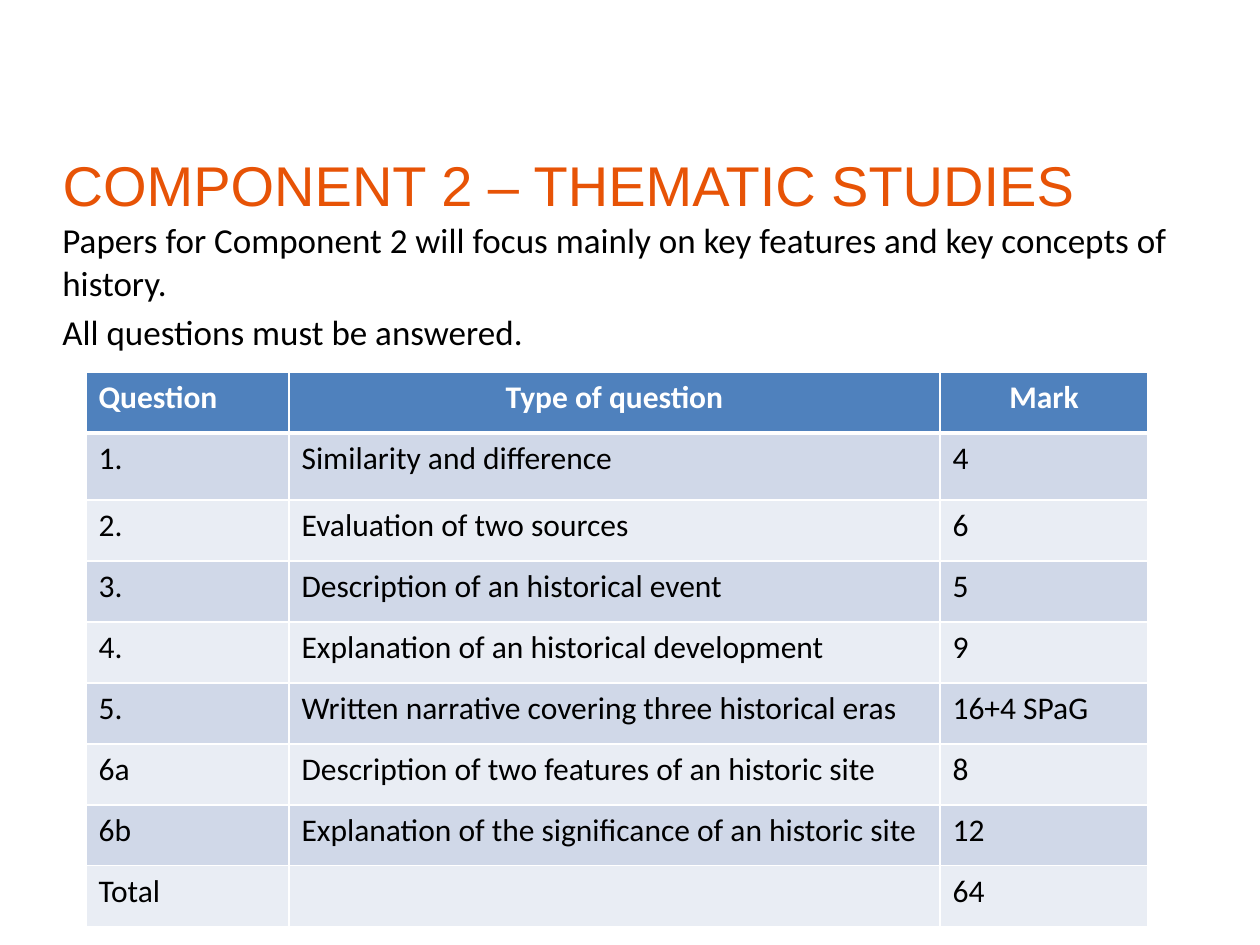
from lxml.etree import SubElement as Sub
from pptx import Presentation
from pptx.dml.color import RGBColor
from pptx.enum.text import MSO_ANCHOR as Anchor, MSO_AUTO_SIZE as Auto, PP_ALIGN as Align
from pptx.oxml.ns import qn
from pptx.util import Emu, Pt

SCALE = 914400 / 126
WHITE, BLACK, ORANGE, BLUE = "FFFFFF", "000000", "E75306", "4F81BD"
BANDS = ("D0D8E8", "E9EDF4")
COLS = (203, 651, 208)
ROWS = (61, 67) + (61,) * 7
HEADING = "COMPONENT 2 – THEMATIC STUDIES"
INTRO = (
    "Papers for Component 2 will focus mainly on key features and key concepts of history.",
    "All questions must be answered.",
)
MARKS = (
    ("Question", "Type of question", "Mark"),
    ("1.", "Similarity and difference", "4"),
    ("2.", "Evaluation of two sources", "6"),
    ("3.", "Description of an historical event", "5"),
    ("4.", "Explanation of an historical development", "9"),
    ("5.", "Written narrative covering three historical eras", "16+4 SPaG"),
    ("6a", "Description of two features of an historic site", "8"),
    ("6b", "Explanation of the significance of an historic site", "12"),
    ("Total", "", "64"),
)


def px(n):
    """Turn pixels into EMU."""
    return Emu(round(n * SCALE))


def rgb(code):
    """Turn a hex string into a colour."""
    return RGBColor.from_string(code)


def style(para, size, color, name="Calibri", bold=False, align=Align.LEFT):
    """Format a whole paragraph."""
    font = para.font
    font.size, font.name, font.bold = Pt(size), name, bold
    font.color.rgb = rgb(color)
    para.alignment = align


def place(shape, left, top, width, height):
    """Position a shape and set up its text frame."""
    shape.left, shape.top = px(left), px(top)
    shape.width, shape.height = px(width), px(height)
    frame = shape.text_frame
    frame.word_wrap, frame.auto_size = True, Auto.NONE
    frame.vertical_anchor = Anchor.TOP
    frame.margin_top = frame.margin_bottom = 0
    return frame


def add_title(slide):
    """Fill the title placeholder."""
    frame = place(slide.shapes.title, 50, 150, 1160, 64)
    frame.text = HEADING
    style(frame.paragraphs[0], 32, ORANGE, "Arial")


def add_intro(slide):
    """Add the lines between title and table."""
    frame = place(slide.shapes.add_textbox(0, 0, 0, 0), 50, 219, 1160, 140)
    frame.text = "\n".join(INTRO)
    for i, para in enumerate(frame.paragraphs):
        style(para, 20, BLACK)
        if i:
            para.space_before = Pt(4)


def edge(cell, side, width):
    """Draw one white border of a cell."""
    line = Sub(cell._tc.get_or_add_tcPr(), qn(f"a:ln{side}"), w=str(Pt(width)))
    Sub(Sub(line, qn("a:solidFill")), qn("a:srgbClr"), val=WHITE)


def fill_cell(cell, text, row, col):
    """Write and format one cell of the table."""
    head = row == 0
    widths = {"L": 1, "R": 1, "T": 3 if row == 1 else 1, "B": 3 if head else 1}
    for side, width in widths.items():
        edge(cell, side, width)
    cell.fill.solid()
    cell.fill.fore_color.rgb = rgb(BLUE if head else BANDS[(row - 1) % 2])
    cell.text = text
    align = Align.CENTER if head and col else Align.LEFT
    style(cell.text_frame.paragraphs[0], 18, WHITE if head else BLACK, bold=head, align=align)


def add_marks(slide):
    """Add the table of questions and marks."""
    size = px(sum(COLS)), px(sum(ROWS))
    table = slide.shapes.add_table(len(ROWS), len(COLS), px(86), px(372), *size).table
    for col, width in zip(table.columns, COLS):
        col.width = px(width)
    for r, (height, texts) in enumerate(zip(ROWS, MARKS)):
        table.rows[r].height = px(height)
        for c, text in enumerate(texts):
            fill_cell(table.cell(r, c), text, r, c)


def main():
    """Build and save the slide."""
    deck = Presentation()
    deck.slide_width, deck.slide_height = px(1260), px(945)
    slide = deck.slides.add_slide(deck.slide_layouts[5])
    add_title(slide)
    add_intro(slide)
    add_marks(slide)
    deck.save("out.pptx")


if __name__ == "__main__":
    main()
